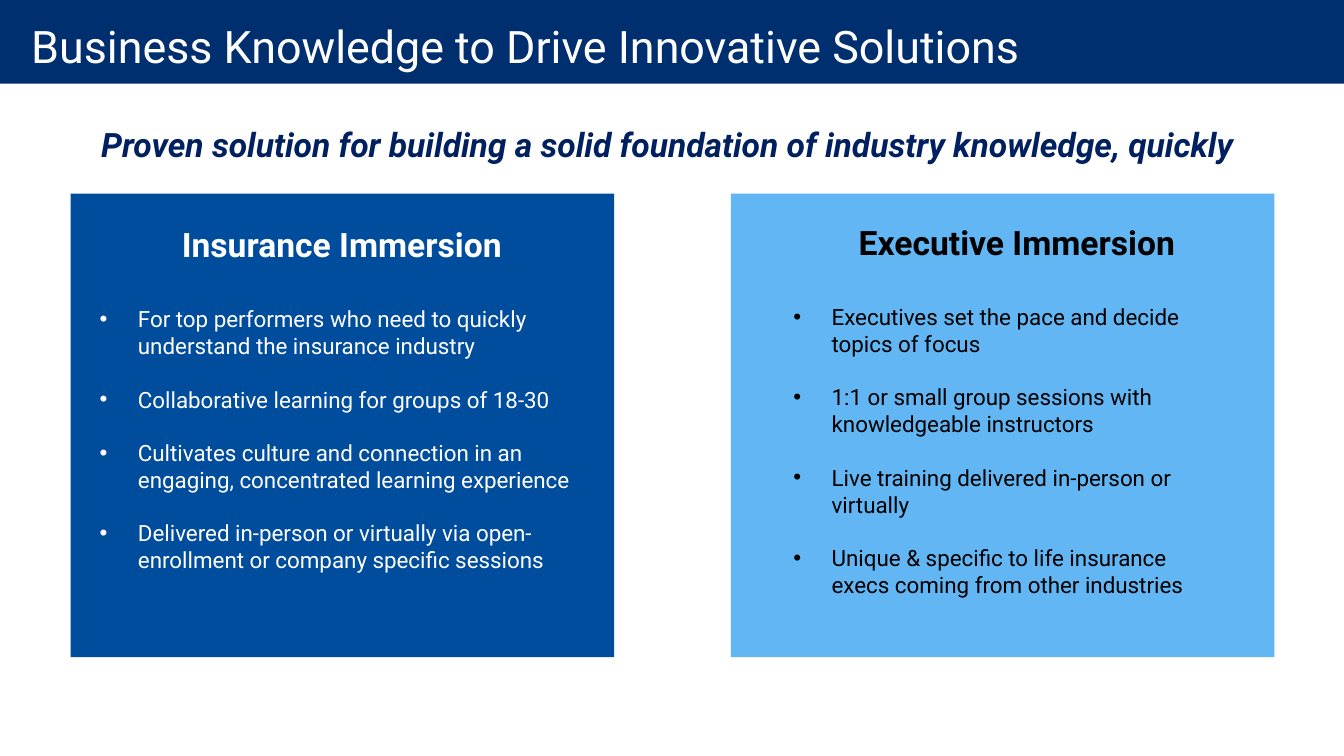
"""Build the slide that presents the two immersion programmes."""
from lxml import etree
from pptx import Presentation, util as u
from pptx.dml.color import RGBColor
from pptx.enum import shapes, text
from pptx.oxml.ns import qn

FONT = "Roboto"
TITLE = "Business Knowledge to Drive Innovative Solutions"
TAGLINE = "Proven solution for building a solid foundation of industry knowledge, quickly"
PANEL_TOP, PANEL_WIDTH, PANEL_HEIGHT = 1.92, 5.39, 4.6
PANELS = [
    {
        "left": 7.25, "fill": "62B6F3", "ink": "000000",
        "heading": "Executive Immersion", "heading_at": (7.91, 2.15, 4.35, 0.5),
        "points_at": (7.77, 2.96, 4.35, 3.06),
        "points": [
            "Executives set the pace and decide topics of focus",
            "1:1 or small group sessions with knowledgeable instructors",
            "Live training delivered in-person or virtually",
            "Unique & specific to life insurance execs coming from other industries",
        ],
    },
    {
        "left": 0.7, "fill": "004C9D", "ink": "FFFFFF",
        "heading": "Insurance Immersion", "heading_at": (1.22, 2.17, 4.34, 0.5),
        "points_at": (0.89, 2.98, 5.2, 2.79),
        "points": [
            "For top performers who need to quickly understand the insurance industry",
            "Collaborative learning for groups of 18-30",
            "Cultivates culture and connection in an engaging, concentrated learning experience",
            "Delivered in-person or virtually via open-enrollment or company specific sessions",
        ],
    },
]


def color(value):
    return RGBColor.from_string(value)


def add_rectangle(slide, at, fill):
    box = slide.shapes.add_shape(shapes.MSO_SHAPE.RECTANGLE, *map(u.Inches, at))
    box.shadow.inherit = False
    box.fill.solid()
    box.fill.fore_color.rgb = color(fill)
    box.line.fill.background()
    return box


def write(box, lines, size, ink, align=text.PP_ALIGN.LEFT, bold=False, italic=False,
          anchor=text.MSO_ANCHOR.TOP, wrap=True, bullets=False):
    frame = box.text_frame
    frame.word_wrap = wrap
    frame.vertical_anchor = anchor
    frame.text = "\n".join(lines)
    for index, para in enumerate(frame.paragraphs):
        para.alignment = align
        if bullets:
            add_bullet(para)
            if index:
                para.space_before = u.Pt(19)
        for span in para.runs:
            span.font.name = FONT
            span.font.size = u.Pt(size)
            span.font.bold = bold
            span.font.italic = italic
            span.font.color.rgb = color(ink)


def add_bullet(para):
    properties = para._p.get_or_add_pPr()
    properties.set("marL", str(u.Inches(0.38)))
    properties.set("indent", str(-u.Inches(0.38)))
    etree.SubElement(properties, qn("a:buFont")).set("typeface", "Arial")
    etree.SubElement(properties, qn("a:buChar")).set("char", "•")


def add_panel(slide, panel):
    fill, ink = panel["fill"], panel["ink"]
    add_rectangle(slide, (panel["left"], PANEL_TOP, PANEL_WIDTH, PANEL_HEIGHT), fill)
    heading = add_rectangle(slide, panel["heading_at"], fill)
    write(heading, [panel["heading"]], 24, ink, text.PP_ALIGN.CENTER, bold=True)
    points = add_rectangle(slide, panel["points_at"], fill)
    write(points, panel["points"], 16, ink, bullets=True)


def main():
    deck = Presentation()
    deck.slide_width, deck.slide_height = u.Inches(13.33), u.Inches(7.5)
    slide = deck.slides.add_slide(deck.slide_layouts[6])

    add_rectangle(slide, (0, -0.03, 13.33, 0.86), "002F70")
    for panel in PANELS:
        add_panel(slide, panel)

    title = slide.shapes.add_textbox(*map(u.Inches, (0.01, -0.03, 13.32, 0.97)))
    frame = title.text_frame
    frame.margin_left, frame.margin_right = u.Inches(0.3), u.Inches(0.2)
    frame.margin_top = frame.margin_bottom = 0
    write(title, [TITLE], 32, "FFFFFF", anchor=text.MSO_ANCHOR.MIDDLE)

    tagline = slide.shapes.add_textbox(*map(u.Inches, (0.3, 1.18, 12.64, 0.5)))
    write(tagline, [TAGLINE], 24, "002060", text.PP_ALIGN.CENTER, bold=True, italic=True)
    deck.save("out.pptx")


if __name__ == "__main__":
    main()
